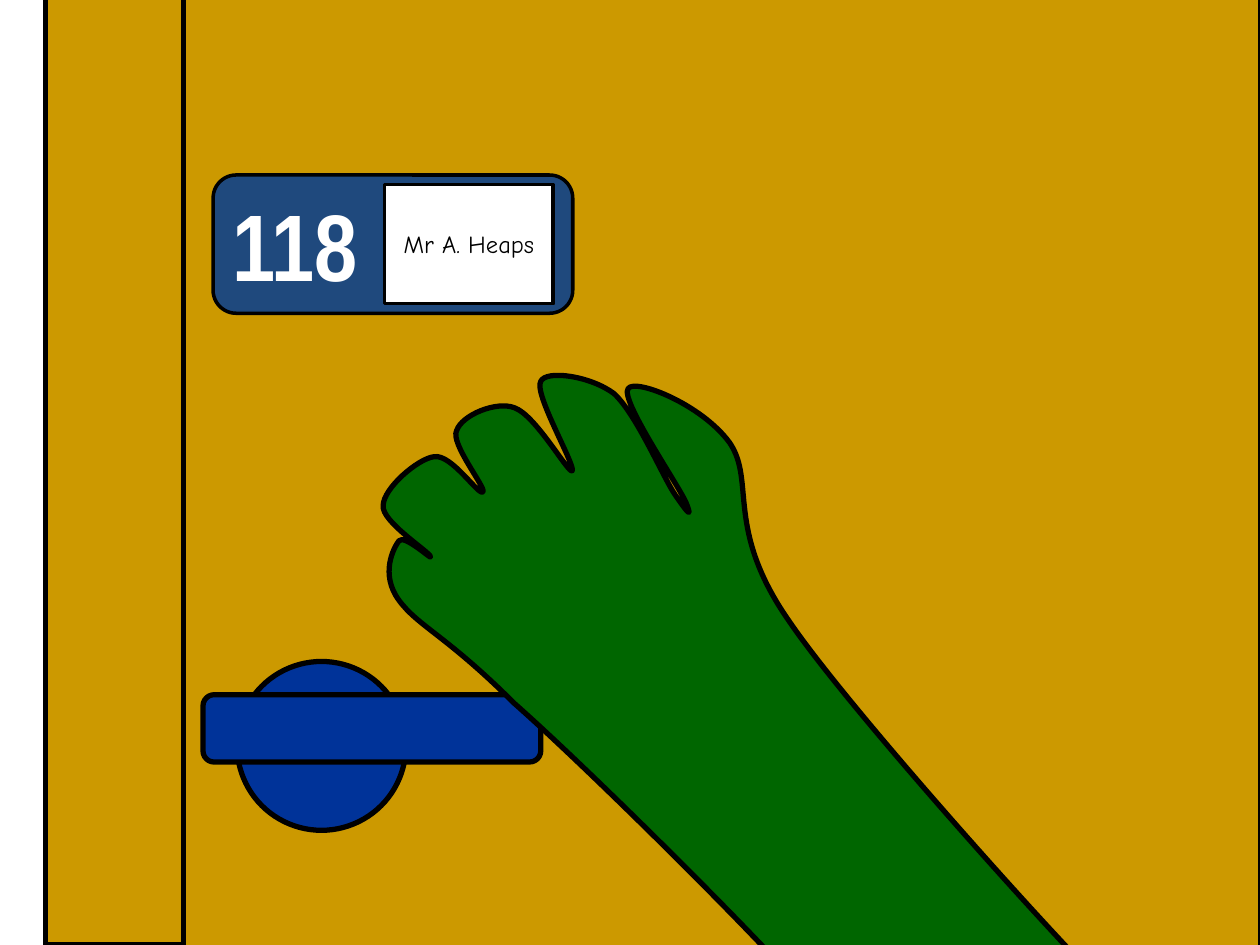
from pptx import Presentation
from pptx import util as u
from pptx.dml import color
from pptx.enum import shapes, text
from pptx.oxml import ns

COLOURS = {
    "wood": "CC9900", "handle": "003399", "hand": "006600",
    "plate": "1F497D", "white": "FFFFFF", "black": "000000",
}
FRAME = [
    (26, 540), (26, -59), (801, -59), (801, 540), (722, 540),
    (722, -17), (105, -17), (105, 540),
]
HAND_START = (638, 570)
HAND_CURVES = [
    [(619, 554), (487, 408), (451, 355)],
    [(414, 302), (432, 275), (417, 253)],
    [(401, 231), (363, 216), (359, 222)],
    [(354, 228), (387, 276), (392, 287)],
    [(396, 297), (393, 293), (386, 283)],
    [(379, 273), (364, 237), (351, 225)],
    [(338, 215), (312, 211), (309, 218)],
    [(305, 225), (329, 266), (327, 269)],
    [(325, 271), (306, 237), (294, 233)],
    [(284, 229), (264, 237), (261, 246)],
    [(257, 253), (278, 279), (276, 281)],
    [(274, 284), (258, 259), (248, 261)],
    [(239, 262), (219, 279), (219, 289)],
    [(218, 298), (245, 315), (246, 318)],
    [(248, 321), (231, 305), (228, 309)],
    [(225, 313), (217, 328), (228, 343)],
    [(239, 358), (255, 363), (294, 402)],
    [(336, 439), (441, 543), (467, 575)],
]


def write(shape, content, font, size, colour="black", bold=False, align=text.PP_ALIGN.LEFT):
    frame = shape.text_frame
    frame.word_wrap = True
    frame.vertical_anchor = text.MSO_ANCHOR.MIDDLE
    paragraph = frame.paragraphs[0]
    paragraph.alignment = align
    run = paragraph.add_run()
    run.text = content
    run.font.name = font
    run.font.size = u.Pt(size)
    run.font.bold = bold
    run.font.color.rgb = color.RGBColor.from_string(COLOURS[colour])


class Scene:
    """Draws outlined shapes on one slide, in points."""

    def __init__(self, slide):
        self.slide = slide

    def style(self, shape, fill, line):
        shape.shadow.inherit = False
        shape.fill.solid()
        shape.fill.fore_color.rgb = color.RGBColor.from_string(COLOURS[fill])
        shape.line.color.rgb = color.RGBColor.from_string(COLOURS["black"])
        shape.line.width = u.Pt(line)
        return shape

    def preset(self, kind, left, top, width, height, fill, line=3):
        box = [u.Pt(value) for value in (left, top, width, height)]
        return self.style(self.slide.shapes.add_shape(kind, *box), fill, line)

    def outline(self, start, points, fill, close=True, line=3):
        builder = self.slide.shapes.build_freeform(*start, scale=u.Pt(1))
        builder.add_line_segments(points, close=close)
        return self.style(builder.convert_to_shape(), fill, line)

    def curve(self, start, curves, fill):
        points = [point for curve in curves for point in curve]
        shape = self.outline(start, points, fill, close=False)
        segments = list(shape.element.iter(ns.qn("a:lnTo")))
        for first, second, third in zip(*[iter(segments)] * 3):
            first.tag = ns.qn("a:cubicBezTo")
            for segment in (second, third):
                first.append(segment[0])
                segment.getparent().remove(segment)
        return shape

    def group(self, *members):
        return self.slide.shapes.add_group_shape(shapes=members)


def main():
    presentation = Presentation()
    presentation.slide_width, presentation.slide_height = u.Pt(720), u.Pt(540)
    scene = Scene(presentation.slides.add_slide(presentation.slide_layouts[6]))
    kind = shapes.MSO_SHAPE

    scene.preset(kind.RECTANGLE, 105, -19.5, 615, 578, "wood", line=2)
    scene.outline(FRAME[0], FRAME[1:], "wood")

    rose = scene.preset(kind.OVAL, 135.5, 378, 96.5, 96.5, "handle")
    lever = scene.preset(kind.ROUNDED_RECTANGLE, 116, 397, 193, 38.5, "handle")
    scene.group(rose, lever)

    scene.curve(HAND_START, HAND_CURVES, "hand")

    plate = scene.preset(kind.ROUNDED_RECTANGLE, 121.8, 100, 205.5, 79, "plate", line=2)
    write(plate, "118", "Arial Narrow", 54, "white", bold=True)
    card = scene.preset(kind.RECTANGLE, 219.7, 105.5, 96.5, 68, "white", line=2)
    write(card, "Mr A. Heaps", "Comic Neue", 14, align=text.PP_ALIGN.CENTER)
    scene.group(plate, card)

    presentation.save("out.pptx")


if __name__ == "__main__":
    main()
